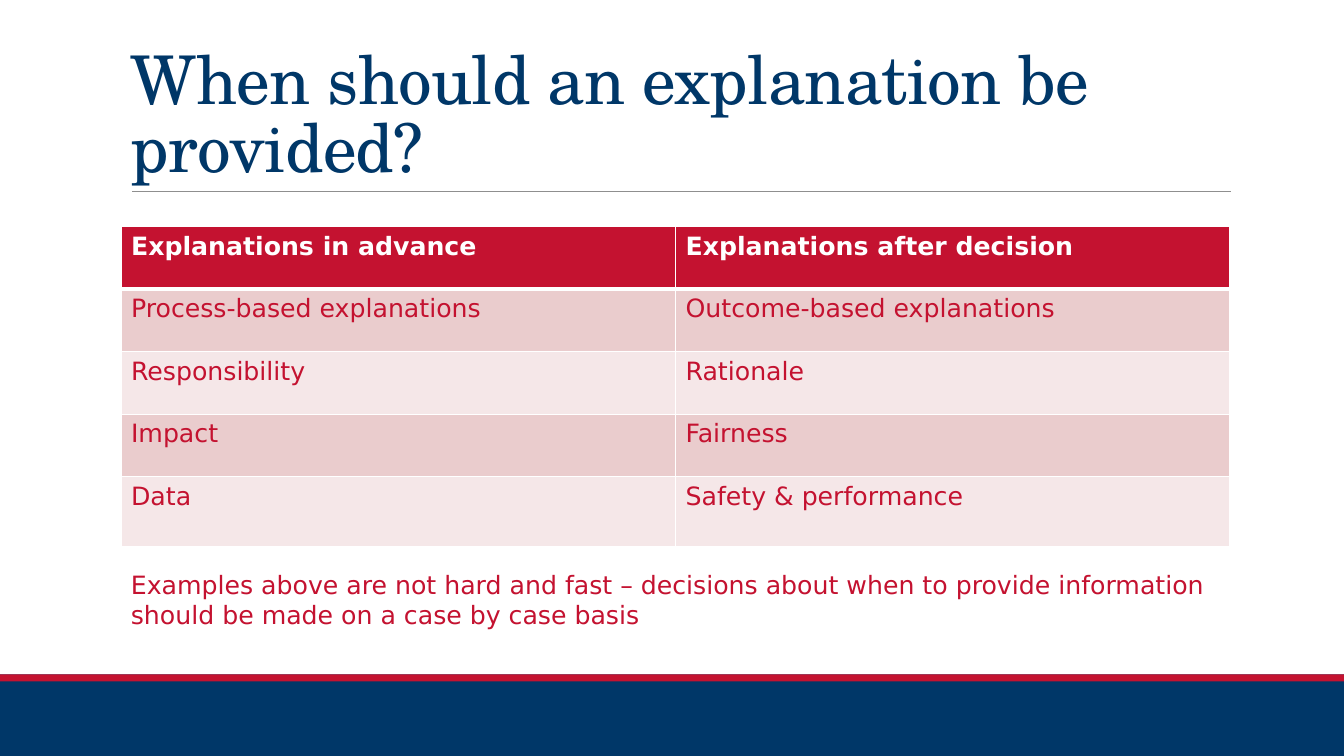
"""Build the slide on when an explanation should be provided."""
from lxml import etree
from pptx import Presentation
from pptx.dml.color import RGBColor
from pptx.enum.shapes import MSO_CONNECTOR, MSO_SHAPE
from pptx.enum.text import MSO_ANCHOR
from pptx.oxml import parse_xml
from pptx.oxml.ns import qn
from pptx.util import Inches, Pt

RECT = MSO_SHAPE.RECTANGLE
LINE = MSO_CONNECTOR.STRAIGHT
BOTTOM, TOP = MSO_ANCHOR.BOTTOM, MSO_ANCHOR.TOP
NAVY = RGBColor(0x00, 0x37, 0x68)
RED = RGBColor(0xC4, 0x12, 0x30)
WHITE = RGBColor(0xFF, 0xFF, 0xFF)
GREY = RGBColor(0x8F, 0x8F, 0x8F)
ROSE = RGBColor(0xEA, 0xCC, 0xCD)
PALE = RGBColor(0xF5, 0xE7, 0xE8)
SANS, SERIF = "DejaVu Sans", "TeX Gyre Schola"
LEFT, WIDTH = Inches(1.2), Inches(11)
ROWS = [
    ("Explanations in advance", "Explanations after decision"),
    ("Process-based explanations", "Outcome-based explanations"),
    ("Responsibility", "Rationale"),
    ("Impact", "Fairness"),
    ("Data", "Safety & performance"),
]


def style(frame, text, face, size, color, bold=False):
    frame.text = text
    run = frame.paragraphs[0].runs[0]
    run.font.name, run.font.size = face, Pt(size)
    run.font.color.rgb, run.font.bold = color, bold
    return run


def add_edge(cell, side, points):
    cell._tc.get_or_add_tcPr().append(parse_xml(
        f'<a:{side} xmlns:a="http://schemas.openxmlformats.org/drawingml/2006/main" '
        f'w="{Pt(points)}"><a:solidFill><a:srgbClr val="{WHITE}"/></a:solidFill></a:{side}>'))


deck = Presentation()
deck.slide_width, deck.slide_height = Inches(13.33), Inches(7.5)
slide = deck.slides.add_slide(deck.slide_layouts[6])
shapes = slide.shapes

for high, color in ((0.81, NAVY), (0.07, RED)):
    band = shapes.add_shape(RECT, 0, Inches(6.69), deck.slide_width, Inches(high))
    band.shadow.inherit = False
    band.fill.solid()
    band.fill.fore_color.rgb = color
    band.line.fill.background()

rule = shapes.add_connector(LINE, Inches(1.31), Inches(1.9), Inches(12.21), Inches(1.9))
rule.line.color.rgb = GREY
rule.line.width = Pt(0.5)
etree.SubElement(rule._element.spPr, qn("a:effectLst"))

title = shapes.add_textbox(LEFT, Inches(0.31), WIDTH, Inches(1.59)).text_frame
title.word_wrap = True
title.vertical_anchor = BOTTOM
head = style(title, "When should an explanation be provided?", SERIF, 48, NAVY)
head.font._element.set("spc", "-50")
title.paragraphs[0].line_spacing = 0.85

table = shapes.add_table(len(ROWS), 2, LEFT, Inches(2.25), WIDTH, Inches(3.17)).table
for r, texts in enumerate(ROWS):
    first = r == 0
    table.rows[r].height = Inches(0.69 if r == len(ROWS) - 1 else 0.62)
    for c, text in enumerate(texts):
        cell = table.cell(r, c)
        cell.vertical_anchor = TOP
        for side in ("lnL", "lnR", "lnT", "lnB"):
            thick = (first and side == "lnB") or (r == 1 and side == "lnT")
            add_edge(cell, side, 3 if thick else 1)
        cell.fill.solid()
        cell.fill.fore_color.rgb = RED if first else (PALE, ROSE)[r % 2]
        style(cell.text_frame, text, SANS, 18, WHITE if first else RED, first)

note = shapes.add_textbox(LEFT, Inches(5.6), WIDTH, Inches(0.71)).text_frame
note.word_wrap = True
style(note, "Examples above are not hard and fast – decisions about when to provide "
      "information should be made on a case by case basis", SANS, 18, RED)

deck.save("out.pptx")
